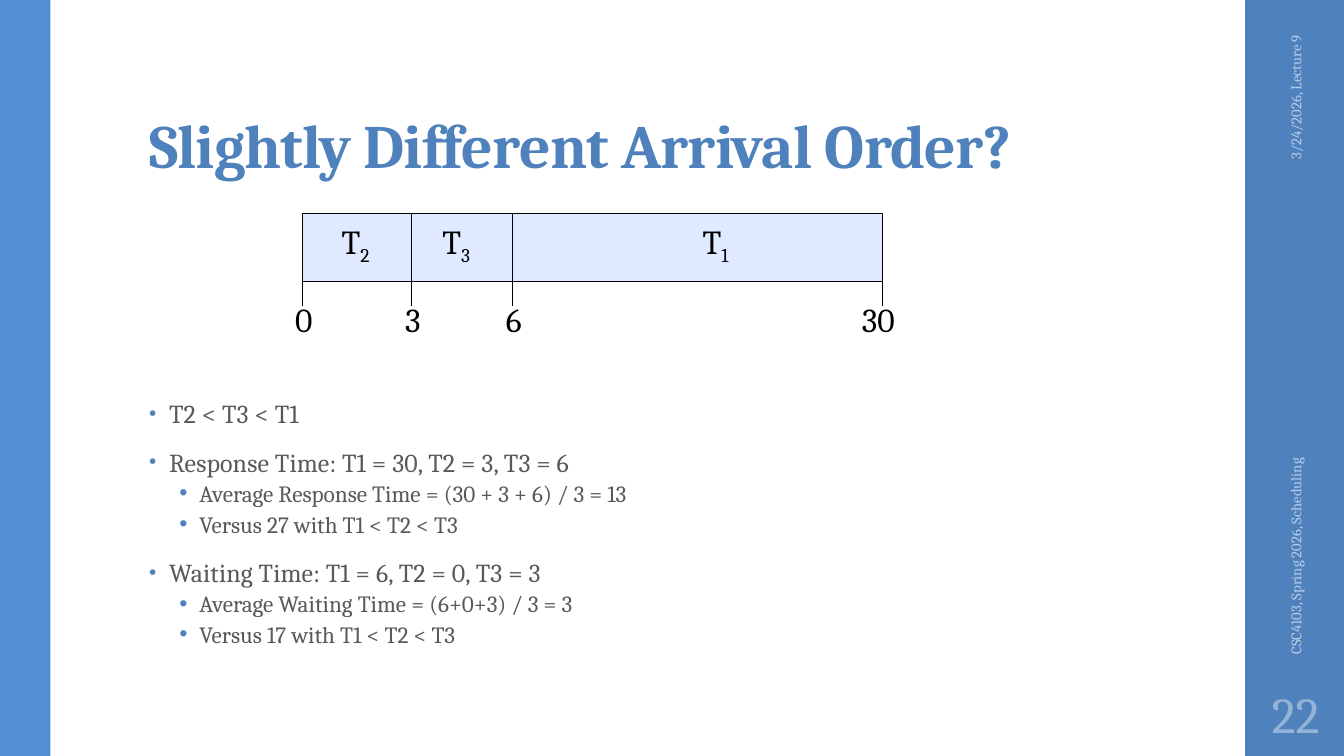
from dataclasses import dataclass

from lxml import etree
from pptx import Presentation
from pptx import util as u
from pptx.dml.color import RGBColor
from pptx.enum import shapes, text
from pptx.oxml import ns

PX_PER_INCH = 100
SCALE = u.Inches(1) // PX_PER_INCH
FONT = "Cambria"
COLORS = {
    "accent": "4F81BD",
    "edge": "558ED5",
    "body": "595959",
    "footer": "B9CDE5",
    "number": "95B3D7",
    "bar": "DFE9FF",
    "ink": "000000",
}


@dataclass(frozen=True)
class Frame:
    left: int
    top: int
    width: int
    height: int

    def emu(self) -> list[int]:
        return [side * SCALE for side in (self.left, self.top, self.width, self.height)]


@dataclass(frozen=True)
class Level:
    margin: int
    size: float
    tracking: int
    line_spacing: float
    before: int
    after: int
    bullet_percent: int


@dataclass(frozen=True)
class Bullet:
    text: str
    level: int = 0


@dataclass(frozen=True)
class Label:
    frame: Frame
    text: str
    subscript: str = ""


HANG = 20
LEVELS = [
    Level(20, 18.5, 10, 0.85, 14, 2, 80),
    Level(50, 16.6, 0, 0.8, 3, 3, 100),
]
BULLETS = [
    Bullet("T2 < T3 < T1"),
    Bullet("Response Time: T1 = 30, T2 = 3, T3 = 6"),
    Bullet("Average Response Time = (30 + 3 + 6) / 3 = 13", 1),
    Bullet("Versus 27 with T1 < T2 < T3", 1),
    Bullet("Waiting Time: T1 = 6, T2 = 0, T3 = 3"),
    Bullet("Average Waiting Time = (6+0+3) / 3 = 3", 1),
    Bullet("Versus 17 with T1 < T2 < T3", 1),
]
BAR = Frame(300, 212, 575, 67)
BAR_BOTTOM = BAR.top + BAR.height
TICK_BOTTOM = BAR_BOTTOM + 25
INNER_EDGES = [408, 508]
EDGES = [BAR.left, *INNER_EDGES, BAR.left + BAR.width]
LABELS = [
    Label(Frame(329, 216, 49, 51), "T", "2"),
    Label(Frame(429, 216, 49, 51), "T", "3"),
    Label(Frame(687, 216, 49, 51), "T", "1"),
    Label(Frame(283, 291, 37, 51), "0"),
    Label(Frame(392, 291, 37, 51), "3"),
    Label(Frame(492, 291, 37, 51), "6"),
    Label(Frame(845, 291, 54, 51), "30"),
]


def rgb(name: str) -> RGBColor:
    return RGBColor.from_string(COLORS[name])


def add_rect(parent, frame: Frame, fill: str, line: str = ""):
    rect = parent.add_shape(shapes.MSO_SHAPE.RECTANGLE, *frame.emu())
    rect.shadow.inherit = False
    rect.fill.solid()
    rect.fill.fore_color.rgb = rgb(fill)
    if line:
        rect.line.color.rgb = rgb(line)
        rect.line.width = u.Pt(0.75)
    else:
        rect.line.fill.background()


def add_vertical(parent, x: int, top: int, bottom: int):
    ends = [length * SCALE for length in (x, top, x, bottom)]
    line = parent.add_connector(shapes.MSO_CONNECTOR.STRAIGHT, *ends)
    line.line.color.rgb = rgb("ink")
    line.line.width = u.Pt(0.75)
    etree.SubElement(line._element.spPr, ns.qn("a:effectLst"))


def add_box(parent, frame: Frame, anchor=text.MSO_ANCHOR.MIDDLE, wrap: bool = True,
            insets: tuple = (10, 5, 10, 5), rotation: int = 0):
    box = parent.add_textbox(*frame.emu())
    box.rotation = rotation
    body = box.text_frame
    body.word_wrap = wrap
    body.vertical_anchor = anchor
    body.margin_left, body.margin_top, body.margin_right, body.margin_bottom = (
        inset * SCALE for inset in insets)
    return body


def write(para, words: str, *, size: float, color: str, bold: bool = False,
          tracking: int = 0, align=text.PP_ALIGN.LEFT, subscript: str = ""):
    para.alignment = align
    for part, baseline in ((words, 0), (subscript, -25000)):
        if not part:
            continue
        span = para.add_run()
        span.text = part
        span.font.name = FONT
        span.font.size = u.Pt(size)
        span.font.bold = bold
        span.font.color.rgb = rgb(color)
        properties = span._r.get_or_add_rPr()
        if tracking:
            properties.set("spc", str(tracking))
        if baseline:
            properties.set("baseline", str(baseline))


def add_bullet(para, level: Level, depth: int, first: bool):
    para.level = depth
    para.line_spacing = level.line_spacing
    para.space_before = u.Pt(0 if first else level.before)
    para.space_after = u.Pt(level.after)
    properties = para._p.get_or_add_pPr()
    properties.set("marL", str(level.margin * SCALE))
    properties.set("indent", str(-HANG * SCALE))
    color = etree.SubElement(properties, ns.qn("a:buClr"))
    etree.SubElement(color, ns.qn("a:srgbClr"), val=COLORS["accent"])
    etree.SubElement(properties, ns.qn("a:buSzPct"), val=str(level.bullet_percent * 1000))
    etree.SubElement(properties, ns.qn("a:buFont"), typeface="Arial")
    etree.SubElement(properties, ns.qn("a:buChar"), char="•")


def add_bullets(parent):
    body = add_box(parent, Frame(138, 394, 940, 282), text.MSO_ANCHOR.TOP)
    for index, bullet in enumerate(BULLETS):
        para = body.add_paragraph() if index else body.paragraphs[0]
        level = LEVELS[bullet.level]
        add_bullet(para, level, bullet.level, index == 0)
        write(para, bullet.text, size=level.size, color="body", tracking=level.tracking)


def add_timeline(parent):
    add_rect(parent, BAR, "bar", "ink")
    for x in INNER_EDGES:
        add_vertical(parent, x, BAR.top, BAR_BOTTOM)
    for x in EDGES:
        add_vertical(parent, x, BAR_BOTTOM, TICK_BOTTOM)
    for label in LABELS:
        body = add_box(parent, label.frame, wrap=False)
        write(body.paragraphs[0], label.text, size=24, color="ink", subscript=label.subscript)


def main():
    deck = Presentation()
    deck.slide_width, deck.slide_height = 1333 * SCALE, 750 * SCALE
    page = deck.slides.add_slide(deck.slide_layouts[6])
    add_rect(page.shapes, Frame(1235, 0, 100, 750), "accent")
    add_rect(page.shapes, Frame(0, 0, 50, 750), "edge")

    title = add_box(page.shapes, Frame(138, 32, 1060, 153), text.MSO_ANCHOR.BOTTOM,
                    insets=(10, 3, 10, 5)).paragraphs[0]
    title.line_spacing = 0.9
    write(title, "Slightly Different Arrival Order?", size=44, color="accent",
          bold=True, tracking=-50)
    add_bullets(page.shapes)

    date = add_box(page.shapes, Frame(1181, 109, 208, 40), rotation=270)
    write(date.paragraphs[0], "3/24/2026, Lecture 9", size=10.5, color="footer",
          align=text.PP_ALIGN.RIGHT)
    course = add_box(page.shapes, Frame(1089, 443, 392, 40), rotation=270)
    write(course.paragraphs[0], "CSC4103, Spring 2026, Scheduling", size=10.5, color="footer")
    number = add_box(page.shapes, Frame(1235, 675, 100, 65), insets=(5, 5, 5, 5))
    write(number.paragraphs[0], "22", size=36, color="number", align=text.PP_ALIGN.CENTER)

    add_timeline(page.shapes.add_group_shape().shapes)
    deck.save("out.pptx")


if __name__ == "__main__":
    main()
